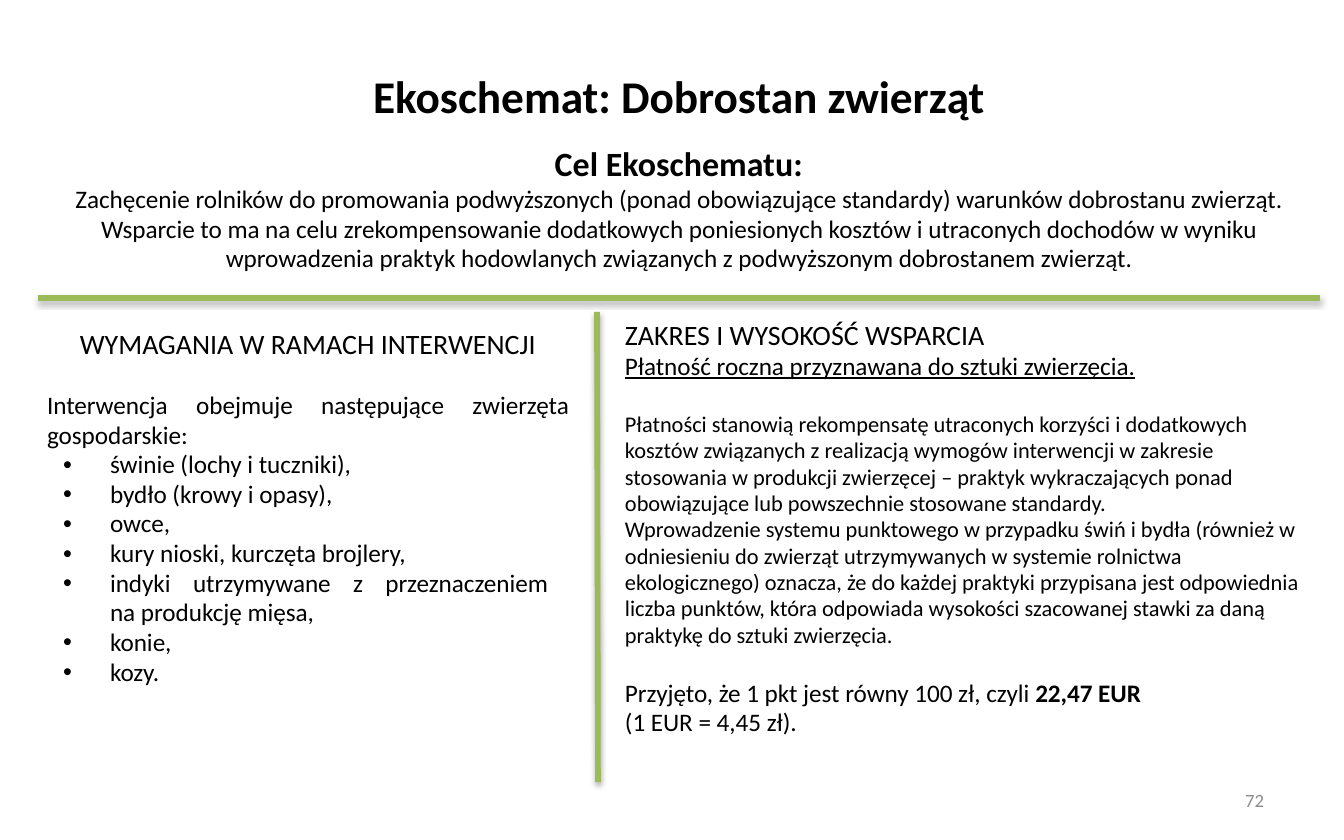
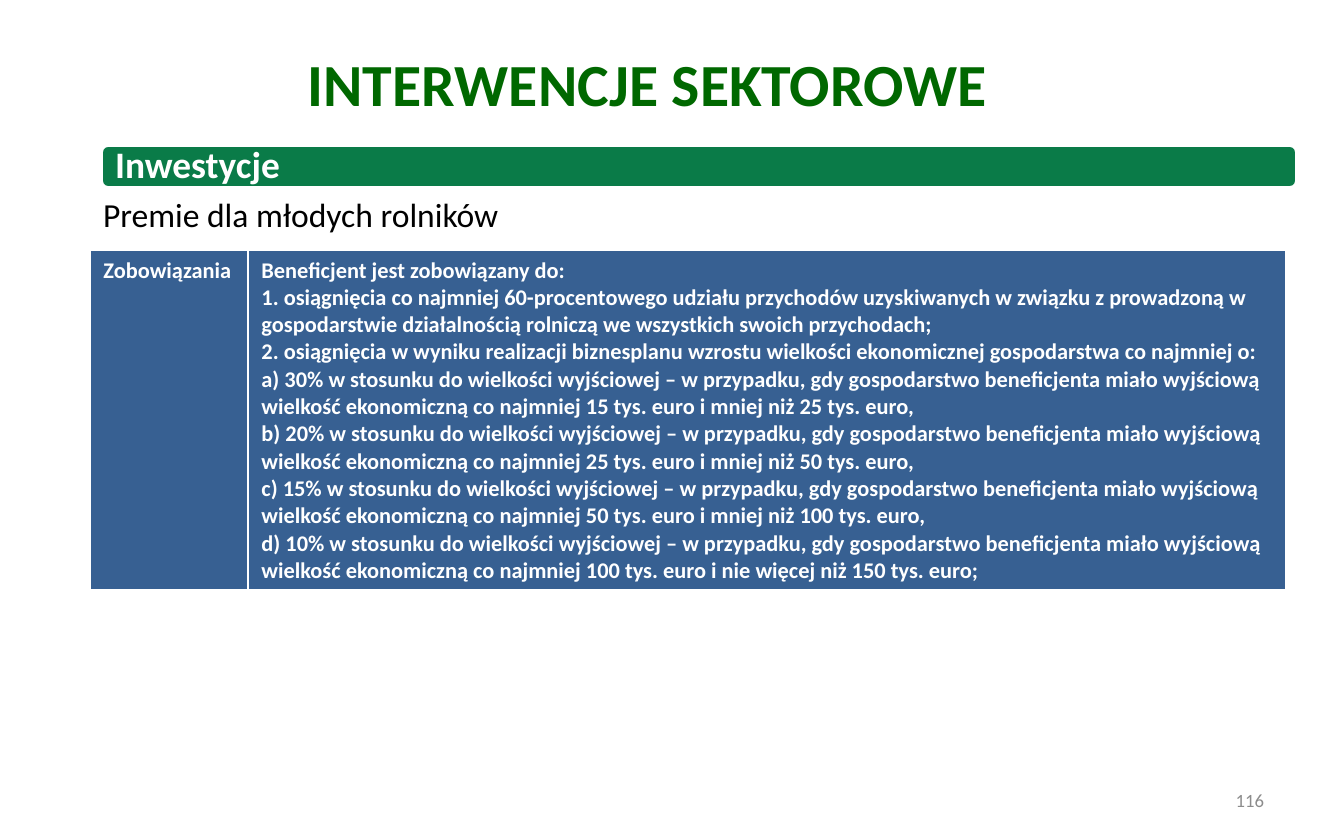
import dataclasses

import lxml.etree
import pptx
import pptx.dml.color
import pptx.enum.shapes
import pptx.enum.text
import pptx.oxml.ns
import pptx.util


@dataclasses.dataclass(frozen=True)
class Theme:
    font: str = "Calibri"
    ink: str = "000000"
    white: str = "FFFFFF"
    gray: str = "8C8C8C"
    rule: str = "9BBB59"
    band: str = "0A7B48"
    head: str = "006800"
    cell: str = "376092"
    huge: float = 32
    title: float = 24.3
    large: float = 20
    goal: float = 18.2
    lead: float = 18
    topic: float = 15
    body: float = 13.5
    small: float = 12
    page: float = 10


THEME = Theme()
SIZE = (1344, 840)
SCALE = 914400 / 134.4
ALIGN = pptx.enum.text.PP_ALIGN
ANCHOR = pptx.enum.text.MSO_ANCHOR


def run(text, size, color=THEME.ink, bold=False, under=False):
    return dict(text=text, size=size, color=color, bold=bold, under=under)


def para(*runs, align=ALIGN.LEFT, gap=0, line=1.0, dot=False):
    return dict(runs=runs, align=align, gap=gap, line=line, dot=dot)


TIGHT = 0.98

GOAL = [
    para(run("Ekoschemat: Dobrostan zwierząt", THEME.title, bold=True),
         align=ALIGN.CENTER, line=TIGHT),
    para(run("Cel Ekoschematu:", THEME.goal, bold=True),
         align=ALIGN.CENTER, gap=11, line=TIGHT),
] + [
    para(run(text, THEME.body), align=ALIGN.CENTER, line=TIGHT)
    for text in (
        "Zachęcenie rolników do promowania podwyższonych (ponad obowiązujące standardy) "
        "warunków dobrostanu zwierząt.",
        "Wsparcie to ma na celu zrekompensowanie dodatkowych poniesionych kosztów i utraconych "
        "dochodów w wyniku wprowadzenia praktyk hodowlanych związanych z podwyższonym "
        "dobrostanem zwierząt.",
    )
]

NEEDS = [
    para(run("WYMAGANIA W RAMACH INTERWENCJI", THEME.topic), align=ALIGN.CENTER, line=TIGHT),
    para(run("Interwencja obejmuje następujące zwierzęta gospodarskie:", THEME.body),
         align=ALIGN.JUSTIFY, gap=16, line=TIGHT),
] + [
    para(run(text, THEME.body), align=ALIGN.JUSTIFY, line=TIGHT, dot=True)
    for text in (
        "świnie (lochy i tuczniki),",
        "bydło (krowy i opasy),",
        "owce,",
        "kury nioski, kurczęta brojlery,",
        "indyki utrzymywane z przeznaczeniem\nna produkcję mięsa,",
        "konie,",
        "kozy.",
    )
]

GRANT = [
    para(run("ZAKRES I WYSOKOŚĆ WSPARCIA", THEME.topic), line=TIGHT),
    para(run("Płatność roczna przyznawana do sztuki zwierzęcia.", THEME.body, under=True),
         line=TIGHT),
    para(run("Płatności stanowią rekompensatę utraconych korzyści i dodatkowych kosztów "
             "związanych z realizacją wymogów interwencji w zakresie stosowania w produkcji "
             "zwierzęcej – praktyk wykraczających ponad obowiązujące lub powszechnie stosowane "
             "standardy.", THEME.small), gap=16, line=TIGHT),
    para(run("Wprowadzenie systemu punktowego w przypadku świń i bydła (również w odniesieniu "
             "do zwierząt utrzymywanych w systemie rolnictwa ekologicznego) oznacza, że do "
             "każdej praktyki przypisana jest odpowiednia liczba punktów, która odpowiada "
             "wysokości szacowanej stawki za daną praktykę do sztuki zwierzęcia.",
             THEME.small), line=TIGHT),
    para(run("Przyjęto, że 1 pkt jest równy 100 zł, czyli ", THEME.body),
         run("22,47 EUR", THEME.body, bold=True), gap=16, line=TIGHT),
    para(run("(1 EUR = 4,45 zł).", THEME.body), line=TIGHT),
]

RULES = [((38, 298), (1320, 298)), ((597, 312), (598, 782))]

SECTOR = [para(run("INTERWENCJE SEKTOROWE", THEME.huge, THEME.head, True), align=ALIGN.CENTER)]
BAND = [para(run("Inwestycje", THEME.large, THEME.white, True), line=0.9)]
BONUS = [para(run("Premie dla młodych rolników", THEME.lead))]

DUTY = [
    ["Zobowiązania"],
    [
        "Beneficjent jest zobowiązany do:",
        "1. osiągnięcia co najmniej 60-procentowego udziału przychodów uzyskiwanych w związku "
        "z prowadzoną w gospodarstwie działalnością rolniczą we wszystkich swoich przychodach;",
        "2. osiągnięcia w wyniku realizacji biznesplanu wzrostu wielkości ekonomicznej "
        "gospodarstwa co najmniej o: a) 30% w stosunku do wielkości wyjściowej – w przypadku, "
        "gdy gospodarstwo beneficjenta miało wyjściową wielkość ekonomiczną co najmniej "
        "15 tys. euro i mniej niż 25 tys. euro,",
        "b) 20% w stosunku do wielkości wyjściowej – w przypadku, gdy gospodarstwo "
        "beneficjenta miało wyjściową wielkość ekonomiczną co najmniej 25 tys. euro "
        "i mniej niż 50 tys. euro,",
        "c) 15% w stosunku do wielkości wyjściowej – w przypadku, gdy gospodarstwo "
        "beneficjenta miało wyjściową wielkość ekonomiczną co najmniej 50 tys. euro "
        "i mniej niż 100 tys. euro,",
        "d) 10% w stosunku do wielkości wyjściowej – w przypadku, gdy gospodarstwo "
        "beneficjenta miało wyjściową wielkość ekonomiczną co najmniej 100 tys. euro "
        "i nie więcej niż 150 tys. euro;",
    ],
]
COLS = [158, 1038]
EDGES = {"lnL": 1, "lnR": 1, "lnT": 1, "lnB": 3}


def px(num):
    return pptx.util.Emu(round(num * SCALE))


def tint(code):
    return pptx.dml.color.RGBColor.from_string(code)


def node(root, tag, **attrs):
    child = lxml.etree.SubElement(root, pptx.oxml.ns.qn("a:" + tag))
    for key, val in attrs.items():
        child.set(key, str(val))
    return child


def bullet(line):
    props = line._p.get_or_add_pPr()
    props.set("marL", str(px(63)))
    props.set("marR", str(px(21)))
    props.set("indent", str(px(-47)))
    node(props, "buFont", typeface="Arial")
    node(props, "buChar", char="•")


def write(frame, paras):
    for count, item in enumerate(paras):
        line = frame.add_paragraph() if count else frame.paragraphs[0]
        if item["dot"]:
            bullet(line)
        line.alignment = item["align"]
        line.line_spacing = item["line"]
        line.space_before = pptx.util.Pt(item["gap"])
        for spec in item["runs"]:
            for row, text in enumerate(spec["text"].split("\n")):
                if row:
                    line.add_line_break()
                piece = line.add_run()
                piece.text = text
                font = piece.font
                font.name = THEME.font
                font.size = pptx.util.Pt(spec["size"])
                font.bold = spec["bold"]
                font.underline = spec["under"]
                font.color.rgb = tint(spec["color"])


def fill(shape, paras, anchor=ANCHOR.TOP, inset=(13, 7)):
    frame = shape.text_frame
    frame.word_wrap = True
    frame.auto_size = pptx.enum.text.MSO_AUTO_SIZE.NONE
    frame.vertical_anchor = anchor
    frame.margin_left = frame.margin_right = px(inset[0])
    frame.margin_top = px(inset[1])
    frame.margin_bottom = px(min(inset[1], 7))
    write(frame, paras)


def box(slide, area, paras, **style):
    fill(slide.shapes.add_textbox(*map(px, area)), paras, **style)


def start(deck, page, area, paras, **style):
    slide = deck.slides.add_slide(deck.slide_layouts[5])
    title = slide.shapes.title
    title.left, title.top, title.width, title.height = map(px, area)
    fill(title, paras, **style)
    box(slide, (964, 778, 313, 44),
        [para(run(page, THEME.page, THEME.gray), align=ALIGN.RIGHT)], anchor=ANCHOR.MIDDLE)
    return slide


def rule(slide, first, last):
    line = slide.shapes.add_connector(
        pptx.enum.shapes.MSO_CONNECTOR.STRAIGHT, *map(px, first + last))
    line.line.color.rgb = tint(THEME.rule)
    line.line.width = pptx.util.Pt(3)
    effect = node(line._element.spPr, "effectLst")
    shade = node(effect, "outerShdw", blurRad=pptx.util.Pt(3.1), dist=pptx.util.Pt(1.8),
                 dir=5400000, rotWithShape=0)
    node(node(shade, "srgbClr", val=THEME.ink), "alpha", val=35000)


def band(slide, area, paras):
    bar = slide.shapes.add_shape(
        pptx.enum.shapes.MSO_SHAPE.ROUNDED_RECTANGLE, *map(px, area))
    bar.shadow.inherit = False
    bar.fill.solid()
    bar.fill.fore_color.rgb = tint(THEME.band)
    bar.line.color.rgb = tint(THEME.white)
    bar.line.width = pptx.util.Pt(2)
    fill(bar, paras, anchor=ANCHOR.MIDDLE, inset=(12, 0))


def grid(slide, left, top, high):
    table = slide.shapes.add_table(
        1, len(COLS), *map(px, (left, top, sum(COLS), high))).table
    for col, (wide, texts) in enumerate(zip(COLS, DUTY)):
        table.columns[col].width = px(wide)
        cell = table.cell(0, col)
        props = cell._tc.get_or_add_tcPr()
        for edge, thick in EDGES.items():
            line = node(props, edge, w=pptx.util.Pt(thick))
            node(node(line, "solidFill"), "srgbClr", val=THEME.white)
        cell.fill.solid()
        cell.fill.fore_color.rgb = tint(THEME.cell)
        write(cell.text_frame,
              [para(run(text, THEME.small, THEME.white, True)) for text in texts])


def main():
    deck = pptx.Presentation()
    deck.slide_width, deck.slide_height = map(px, SIZE)

    welfare = start(deck, "72", (15, 8, 1328, 272), GOAL, inset=(13, 63))
    box(welfare, (34, 321, 548, 480), NEEDS)
    box(welfare, (612, 312, 708, 445), GRANT)
    for first, last in RULES:
        rule(welfare, first, last)

    sector = start(deck, "116", (253, 40, 789, 95), SECTOR)
    band(sector, (101, 145, 1196, 43), BAND)
    grid(sector, 90, 250, 336)
    box(sector, (90, 187, 1187, 54), BONUS)

    deck.save("out.pptx")


if __name__ == "__main__":
    main()
